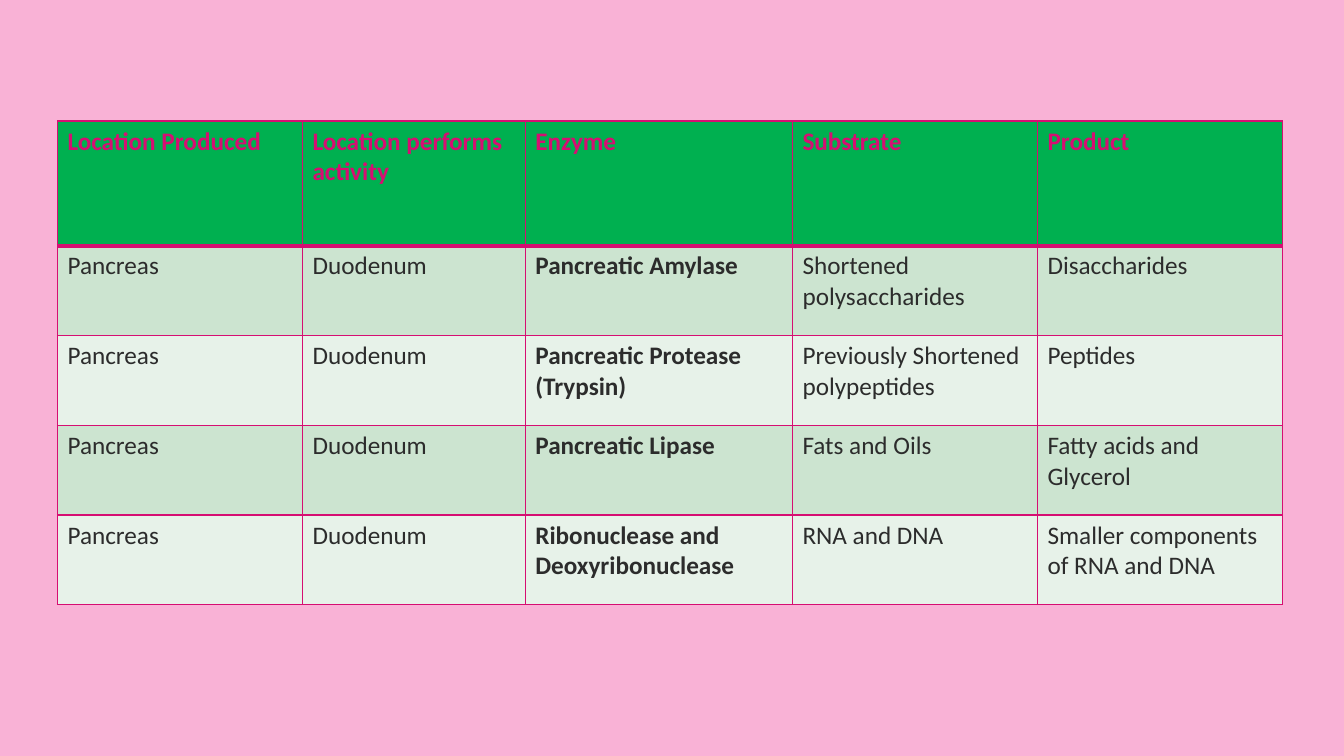
from pptx import Presentation
from pptx.dml.color import RGBColor as RGB
from pptx.oxml import parse_xml
from pptx.oxml.ns import nsdecls
from pptx.util import Inches, Pt

COLORS = {
    "background": "F9B2D6",
    "accent": "D60E72",
    "header": "00B050",
    "band_dark": "CCE4D0",
    "band_light": "E7F2E9",
    "text": "2C2C2C",
}

ENZYMES = [
    ["Location Produced", "Location performs activity", "Enzyme", "Substrate", "Product"],
    ["Pancreas", "Duodenum", "Pancreatic Amylase", "Shortened polysaccharides",
     "Disaccharides"],
    ["Pancreas", "Duodenum", "Pancreatic Protease (Trypsin)",
     "Previously Shortened polypeptides", "Peptides"],
    ["Pancreas", "Duodenum", "Pancreatic Lipase", "Fats and Oils",
     "Fatty acids and Glycerol"],
    ["Pancreas", "Duodenum", "Ribonuclease and Deoxyribonuclease", "RNA and DNA",
     "Smaller components of RNA and DNA"],
]
ENZYME_COLUMN = 2
COLUMN_WIDTHS = [2.43, 2.21, 2.65, 2.43, 2.43]
ROW_HEIGHTS = [1.24] + [0.89] * 4


class SlideBuilder:
    font = "Calibri"
    size = 18

    def __init__(self, prs):
        self.s = prs.slides.add_slide(prs.slide_layouts[6])

    def color(self, name):
        return RGB.from_string(COLORS[name])

    def background(self, name):
        fill = self.s.background.fill
        fill.solid()
        fill.fore_color.rgb = self.color(name)

    def borders(self, cell, **widths):
        """Draw the sides L, R, T and B, 1 pt wide unless another width is given."""
        tcPr = cell._tc.get_or_add_tcPr()
        for i, side in enumerate("LRTB"):
            width = Pt(widths.get(side, 1))
            tcPr.insert(i, parse_xml(
                f'<a:ln{side} {nsdecls("a")} w="{width}"><a:solidFill>'
                f'<a:srgbClr val="{COLORS["accent"]}"/></a:solidFill></a:ln{side}>'))

    def cell(self, cell, text, fill, color, bold):
        cell.fill.solid()
        cell.fill.fore_color.rgb = self.color(fill)
        cell.text_frame.text = text
        font = cell.text_frame.paragraphs[0].runs[0].font
        font.name, font.size, font.bold = self.font, Pt(self.size), bold
        font.color.rgb = self.color(color)

    def table(self, rows, left, top, widths, heights):
        table = self.s.shapes.add_table(
            len(rows), len(widths), Inches(left), Inches(top),
            Inches(sum(widths)), Inches(sum(heights))).table
        for column, width in zip(table.columns, widths):
            column.width = Inches(width)
        for row, height in zip(table.rows, heights):
            row.height = Inches(height)
        for i, texts in enumerate(rows):
            for j, text in enumerate(texts):
                cell = table.cell(i, j)
                if i == 0:
                    self.cell(cell, text, "header", "accent", True)
                    self.borders(cell, B=3)
                else:
                    band = "band_dark" if i % 2 else "band_light"
                    self.cell(cell, text, band, "text", j == ENZYME_COLUMN)
                    self.borders(cell, T=3 if i == 1 else 1)


def main():
    prs = Presentation()
    prs.slide_width, prs.slide_height = Inches(13.33), Inches(7.5)
    slide = SlideBuilder(prs)
    slide.background("background")
    slide.table(ENZYMES, 0.57, 1.2, COLUMN_WIDTHS, ROW_HEIGHTS)
    prs.save("out.pptx")


if __name__ == "__main__":
    main()
